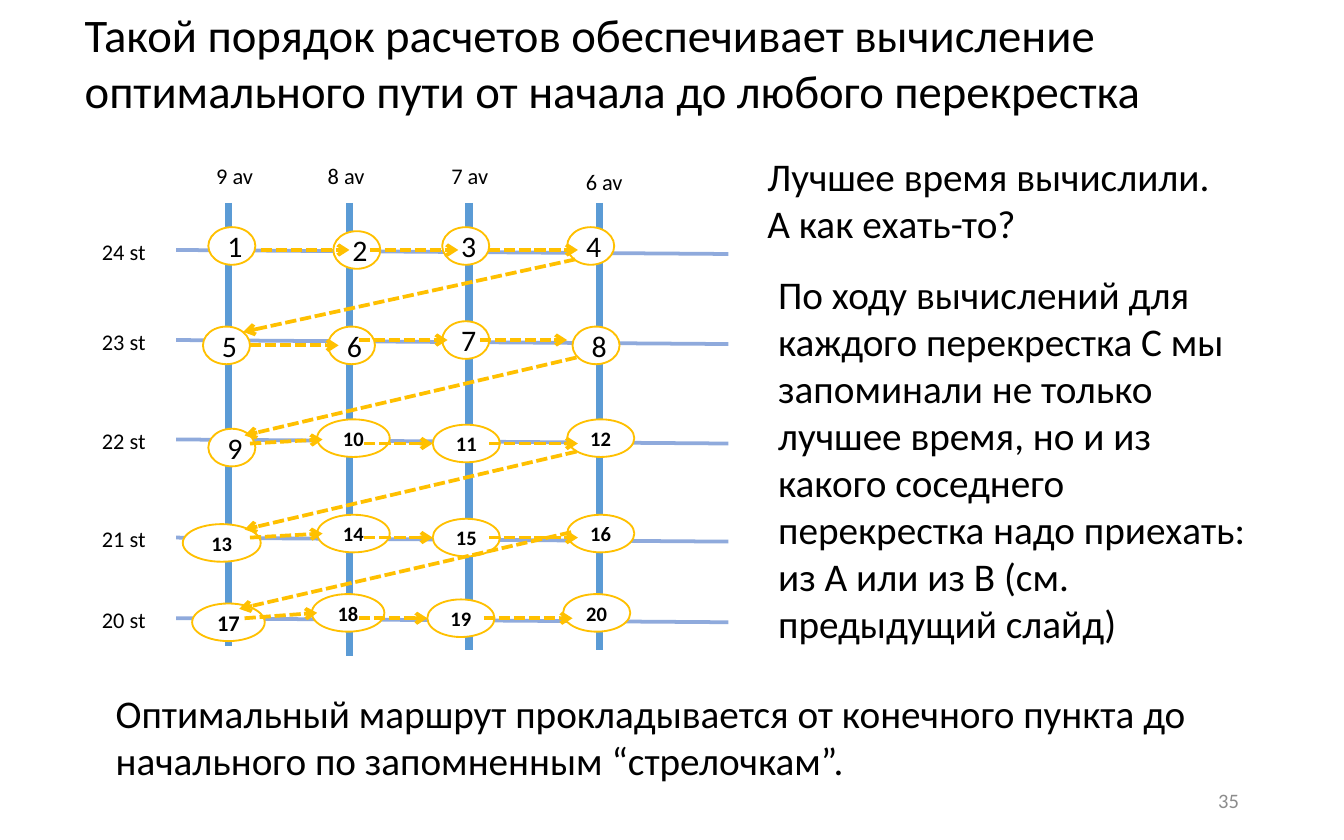
from lxml import etree
from pptx import Presentation
from pptx import util as u
from pptx.dml.color import RGBColor
from pptx.enum import dml, shapes, text
from pptx.oxml import ns

BLACK = RGBColor(0, 0, 0)
WHITE = RGBColor(255, 255, 255)
GRAY = RGBColor(0x8C, 0x8C, 0x8C)
AVENUE_BLUE = RGBColor(0x5B, 0x9B, 0xD5)
STREET_BLUE = RGBColor(0x8F, 0xAA, 0xDC)
GOLD = RGBColor(0xFF, 0xC0, 0x00)


def write(shape, content, size, color=BLACK, bold=False, align=text.PP_ALIGN.LEFT,
          anchor=text.MSO_ANCHOR.TOP, wrap=True):
    frame = shape.text_frame
    frame.text = content
    frame.word_wrap = wrap
    frame.auto_size = text.MSO_AUTO_SIZE.NONE
    frame.vertical_anchor = anchor
    if wrap:
        frame.margin_left = frame.margin_right = u.Inches(0.09)
        frame.margin_top = frame.margin_bottom = u.Inches(0.04)
    for paragraph in frame.paragraphs:
        paragraph.alignment = align
        for run in paragraph.runs:
            run.font.name = "Calibri"
            run.font.size = u.Pt(size)
            run.font.bold = bold
            run.font.color.rgb = color


def draw_line(parent, ends, color, width):
    line = parent.add_connector(shapes.MSO_CONNECTOR.STRAIGHT, *[u.Inches(v) for v in ends])
    line.line.color.rgb = color
    line.line.width = u.Pt(width)
    etree.SubElement(line._element.spPr, ns.qn("a:effectLst"))
    return line


presentation = Presentation()
presentation.slide_width = u.Inches(10)
presentation.slide_height = u.Inches(6.25)
slide = presentation.slides.add_slide(presentation.slide_layouts[5])

title = slide.shapes.title
title.left, title.top, title.width, title.height = [u.Inches(v) for v in (0.54, 0, 8.92, 0.93)]
write(title, "Такой порядок расчетов обеспечивает вычисление "
      "оптимального пути от начала до любого перекрестка", 25)

comments = [
    (5.62, 1.09, 3.8, 0.8, "Лучшее время вычислили.\nА как ехать-то?"),
    (5.7, 1.97, 3.8, 3.02, "По ходу вычислений для каждого перекрестка C мы запоминали "
     "не только лучшее время, но и из какого соседнего перекрестка надо приехать: "
     "из A или из B (см. предыдущий слайд)"),
    (0.77, 5.09, 8.45, 0.8, "Оптимальный маршрут прокладывается от конечного пункта "
     "до начального по запомненным “стрелочкам”."),
]
for *box, content in comments:
    write(slide.shapes.add_textbox(*[u.Inches(v) for v in box]), content, 21)

# City map: avenues run down, streets run across with a slight slope
city_map = slide.shapes.add_group_shape().shapes
avenues = [("9 av", 1.7, 4.81, 1.51, 1.16), ("8 av", 2.6, 4.88, 2.34, 1.16),
           ("7 av", 3.49, 4.84, 3.26, 1.16), ("6 av", 4.46, 4.84, 4.26, 1.2)]
streets = [("24 st", 1.86), ("23 st", 2.53), ("22 st", 3.27), ("21 st", 4), ("20 st", 4.6)]
labels = []
for name, x, bottom, label_left, label_top in avenues:
    draw_line(city_map, (x, 1.51, x, bottom), AVENUE_BLUE, 4)
    labels.append((name, label_left, label_top, 0.48))
for name, y in streets:
    draw_line(city_map, (1.31, y, 5.42, y + 0.03), STREET_BLUE, 2)
    labels.append((name, 0.66, y - 0.14, 0.53))
for name, left, top, width in labels:
    label = city_map.add_textbox(u.Inches(left), u.Inches(top), u.Inches(width), u.Inches(0.3))
    write(label, name, 12, wrap=False)

# Crossings in order of calculation: left, top, width
crossings = [
    (1.55, 1.69, 0.35), (2.48, 1.72, 0.35), (3.29, 1.69, 0.35), (4.22, 1.69, 0.35),
    (1.51, 2.43, 0.35), (2.44, 2.43, 0.35), (3.29, 2.39, 0.35), (4.26, 2.43, 0.35),
    (1.55, 3.19, 0.35), (2.36, 3.12, 0.54), (3.22, 3.16, 0.5), (4.22, 3.12, 0.5),
    (1.36, 3.9, 0.58), (2.36, 3.83, 0.54), (3.22, 3.86, 0.5), (4.22, 3.83, 0.5),
    (1.43, 4.49, 0.54), (2.32, 4.42, 0.54), (3.18, 4.46, 0.5), (4.19, 4.42, 0.5),
]
for number, (left, top, width) in enumerate(crossings, start=1):
    crossing = slide.shapes.add_shape(shapes.MSO_SHAPE.OVAL, u.Inches(left), u.Inches(top),
                                      u.Inches(width), u.Inches(0.28))
    crossing.shadow.inherit = False
    crossing.fill.solid()
    crossing.fill.fore_color.rgb = WHITE
    crossing.line.color.rgb = GOLD
    crossing.line.width = u.Pt(1)
    size = 16 if number < 10 else 12 if number == 17 else 11
    write(crossing, str(number), size, bold=number >= 10,
          align=text.PP_ALIGN.CENTER, anchor=text.MSO_ANCHOR.MIDDLE)

# Route: three steps along each street, then back to the start of the next one
steps = [
    (1.94, 1.86, 2.6, 1.86), (2.75, 1.86, 3.41, 1.86), (3.64, 1.86, 4.3, 1.86),
    (4.28, 1.93, 1.81, 2.47),
    (1.86, 2.57, 2.52, 2.57), (2.67, 2.53, 3.33, 2.53), (3.57, 2.53, 4.22, 2.53),
    (4.29, 2.66, 1.82, 3.24),
    (1.86, 3.3, 2.4, 3.27), (2.71, 3.3, 3.22, 3.3), (3.64, 3.3, 4.3, 3.3),
    (4.29, 3.36, 1.82, 3.94),
    (1.86, 4, 2.4, 3.97), (2.71, 4, 3.22, 4), (3.64, 4, 4.3, 4),
    (4.25, 3.96, 1.78, 4.53),
    (1.82, 4.6, 2.36, 4.56), (2.67, 4.6, 3.18, 4.6), (3.6, 4.6, 4.26, 4.6),
]
for ends in steps:
    arrow = draw_line(slide.shapes, ends, GOLD, 2)
    arrow.line.dash_style = dml.MSO_LINE.SQUARE_DOT
    etree.SubElement(arrow.line._get_or_add_ln(), ns.qn("a:tailEnd"), type="arrow")

page_number = slide.shapes.add_textbox(u.Inches(7.06), u.Inches(5.79), u.Inches(2.25), u.Inches(0.33))
write(page_number, "35", 11, GRAY, align=text.PP_ALIGN.RIGHT, anchor=text.MSO_ANCHOR.MIDDLE)

presentation.save("out.pptx")
